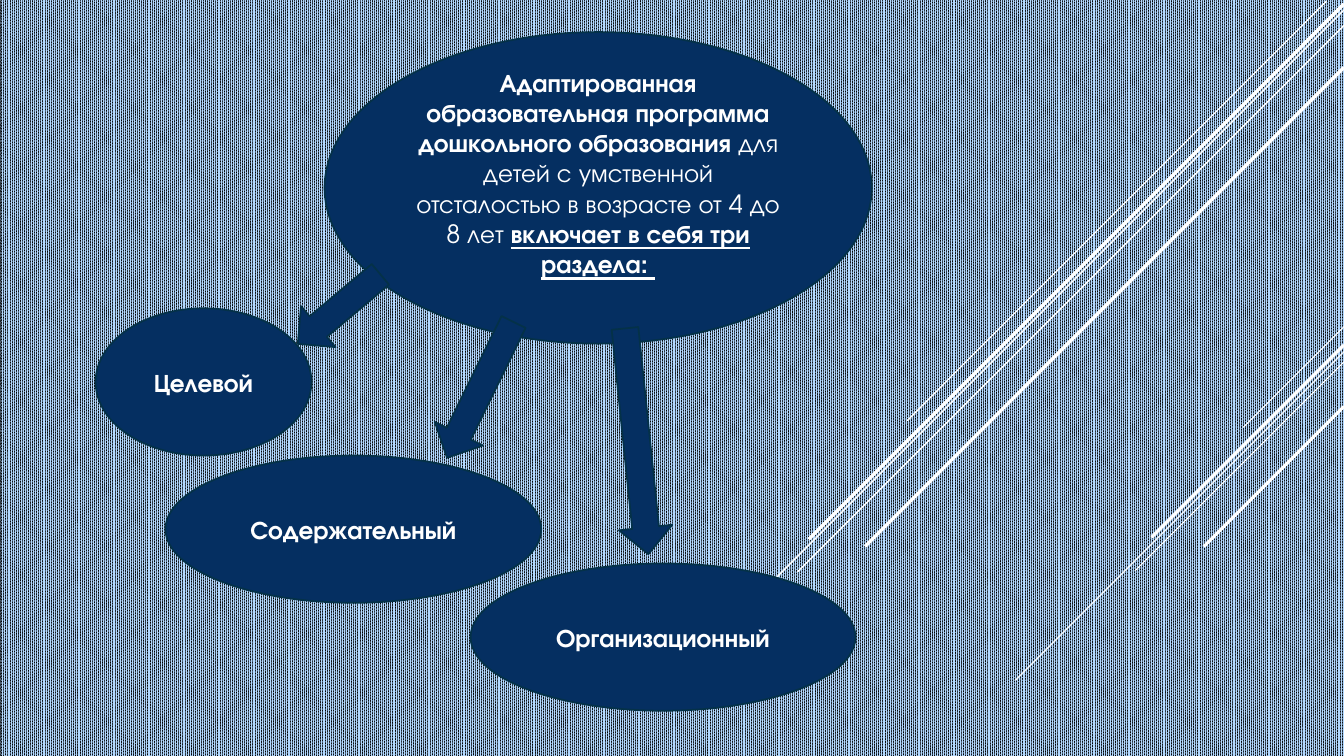
import pptx
import pptx.util
import pptx.dml.color
import pptx.enum.dml
import pptx.enum.shapes
import pptx.enum.text

Cm = pptx.util.Cm
Pt = pptx.util.Pt
kinds = pptx.enum.shapes.MSO_SHAPE
hues = {"navy": "052F61", "edge": "043148", "white": "FFFFFF", "sky": "B3D9FF", "black": "000000"}


def tint(name):
    return pptx.dml.color.RGBColor.from_string(hues[name])


def draw(kind, left, top, width, height):
    shape = slide.shapes.add_shape(kind, Cm(left), Cm(top), Cm(width), Cm(height))
    shape.shadow.inherit = False
    shape.fill.solid()
    shape.fill.fore_color.rgb = tint("navy")
    shape.line.color.rgb = tint("edge")
    shape.line.width = Pt(1.25)
    return shape


deck = pptx.Presentation()
deck.slide_width = Cm(33.87)
deck.slide_height = Cm(19.05)
slide = deck.slides.add_slide(deck.slide_layouts[6])

back = slide.background.fill
back.patterned()
back.pattern = pptx.enum.dml.MSO_PATTERN.PERCENT_90
back.fore_color.rgb = tint("sky")
back.back_color.rgb = tint("black")

rays = [
    (33.87, 8.23, 2.54, 0.75),
    (33.87, 8.86, 8.28, 0.75),
    (33.87, 9.12, 5.26, 0.75),
    (33.87, 8.69, 4.85, 2.25),
    (33.87, 10.24, 3.53, 2.25),
    (33.43, 0.03, 10.57, 1),
    (33.87, 0.25, 16.89, 1),
    (33.87, 0.64, 13.77, 1),
    (33.87, 0.1, 13.49, 2.5),
    (33.87, 1.7, 12.07, 2.5),
]
for x, y, run, weight in rays:
    ray = slide.shapes.add_connector(
        pptx.enum.shapes.MSO_CONNECTOR.STRAIGHT, Cm(x), Cm(y), Cm(x - run), Cm(y + run))
    ray.line.color.rgb = tint("white")
    ray.line.width = Pt(weight)
    ray._element.spPr.append(pptx.oxml.parse_xml(
        '<a:effectLst xmlns:a="http://schemas.openxmlformats.org/drawingml/2006/main"/>'))

intro = [
    ("Адаптированная образовательная программа дошкольного образования ", True, False),
    ("для детей с умственной отсталостью в возрасте от 4 до 8 лет ", False, False),
    ("включает в себя три раздела: ", True, True),
]
ovals = [
    (8.18, 0.81, 13.79, 7.85, intro),
    (2.41, 7.77, 5.44, 3.71, [("Целевой", True, False)]),
    (4.17, 11.48, 9.47, 3.71, [("Содержательный", True, False)]),
    (11.86, 14.2, 9.7, 3.71, [("Организационный", True, False)]),
]
for left, top, width, height, parts in ovals:
    frame = draw(kinds.OVAL, left, top, width, height).text_frame
    frame.word_wrap = True
    frame.vertical_anchor = pptx.enum.text.MSO_ANCHOR.MIDDLE
    para = frame.paragraphs[0]
    para.alignment = pptx.enum.text.PP_ALIGN.CENTER
    para.font.name = "TeX Gyre Adventor"
    para.font.size = Pt(18)
    para.font.color.rgb = tint("white")
    for words, bold, under in parts:
        piece = para.add_run()
        piece.text = words
        piece.font.bold = bold
        piece.font.underline = under
    if parts is intro:
        para.add_line_break()

arrows = [
    (7.87, 6.43, 2.72, 49.9),
    (11.43, 7.92, 3.81, 26.1),
    (15.37, 8.26, 5.72, 354.1),
]
for left, top, height, turn in arrows:
    draw(kinds.DOWN_ARROW, left, top, 1.35, height).rotation = turn

deck.save("out.pptx")
